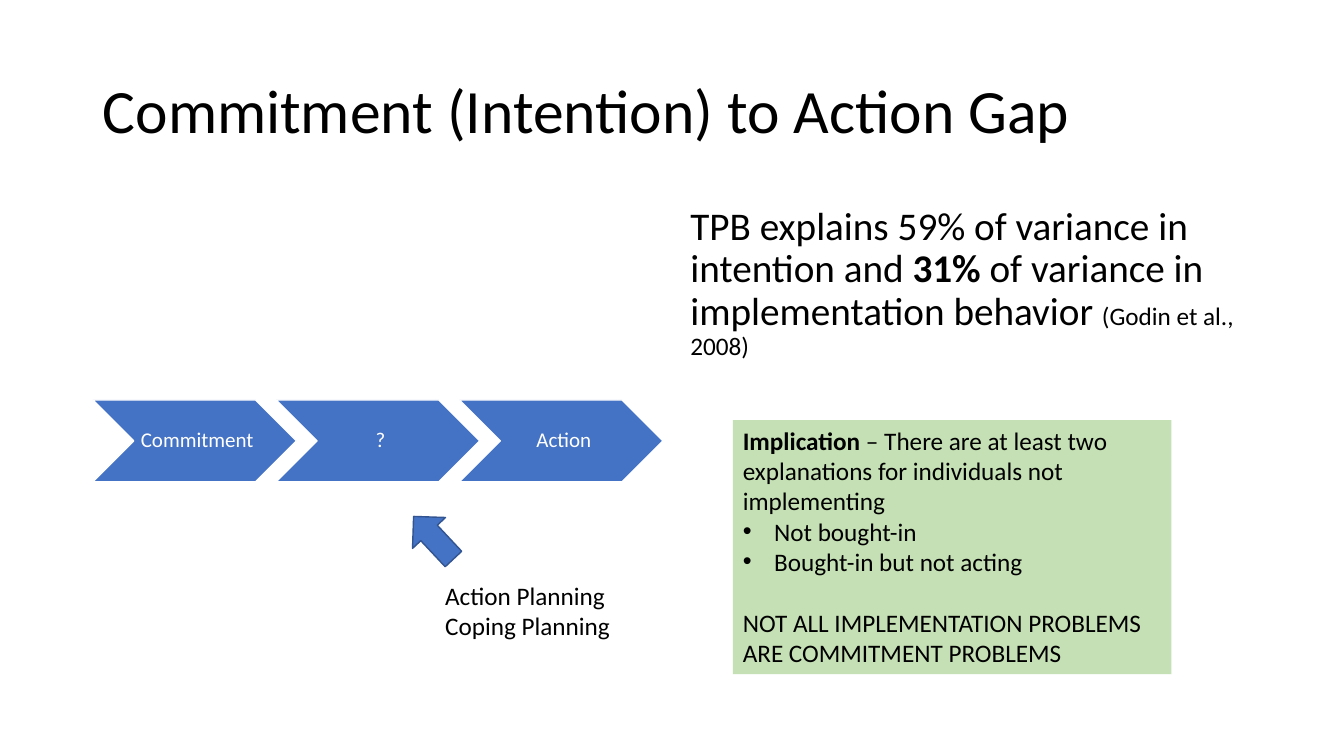
"""Build the slide on the gap between commitment and action."""
from dataclasses import dataclass

from lxml.etree import SubElement
from pptx import Presentation
from pptx.dml.color import RGBColor
from pptx.enum.shapes import MSO_SHAPE
from pptx.enum.text import MSO_ANCHOR, PP_ALIGN
from pptx.oxml.ns import qn
from pptx.util import Cm, Pt


@dataclass(frozen=True)
class Theme:
    """Hold the colours, font and type sizes of the slide."""
    face: str = "Calibri"
    ink: str = "000000"
    white: str = "FFFFFF"
    blue: str = "4472C4"
    edge: str = "325491"
    green: str = "C5E0B4"
    title: int = 44
    lead: int = 28
    note: int = 18
    step: int = 15


THEME = Theme()


def apply(item, form):
    """Set each value in the form on the item."""
    for name, value in form.items():
        setattr(item, name, value)


def write(shape, paras, size, ink=THEME.ink, frame=None, form=None):
    """Fill a shape with paragraphs made of (text, font form) runs."""
    text = shape.text_frame
    apply(text, {"word_wrap": True, **(frame or {})})
    for i, runs in enumerate(paras):
        para = text.add_paragraph() if i else text.paragraphs[0]
        apply(para, {"alignment": PP_ALIGN.LEFT, **(form or {})})
        for words, style in runs:
            run = para.add_run()
            run.text = words
            apply(run.font, {"name": THEME.face, "size": Pt(size), **style})
            run.font.color.rgb = RGBColor.from_string(ink)
    return text.paragraphs


def add_text(slide, area, paras, size, **more):
    """Add a text box with its area given in centimetres."""
    box = slide.shapes.add_textbox(*map(Cm, area))
    return write(box, paras, size, **more)


def add_block(slide, kind, area, fill, line=None):
    """Add a flat preset shape with its area given in centimetres."""
    shape = slide.shapes.add_shape(kind, *map(Cm, area))
    shape.shadow.inherit = False
    shape.fill.solid()
    shape.fill.fore_color.rgb = RGBColor.from_string(fill)
    if line:
        shape.line.color.rgb = RGBColor.from_string(line)
        shape.line.width = Pt(1)
    else:
        shape.line.fill.background()
    return shape


def add_steps(slide, names):
    """Add a row of chevrons, one for each name."""
    frame = {"vertical_anchor": MSO_ANCHOR.MIDDLE, "word_wrap": False,
             "margin_left": Cm(0.18), "margin_right": Cm(0.05),
             "margin_top": Cm(0.05), "margin_bottom": Cm(0.05)}
    form = {"alignment": PP_ALIGN.CENTER, "line_spacing": 0.9}
    for i, name in enumerate(names):
        area = (2.34 + 4.62 * i, 10.08, 5.13, 2.06)
        step = add_block(slide, MSO_SHAPE.CHEVRON, area, THEME.blue, THEME.white)
        write(step, [[(name, {})]], THEME.step, THEME.white, frame, form)


def add_dot(para):
    """Give a paragraph a bullet with a hanging indent."""
    props = para._p.get_or_add_pPr()
    dent = int(Cm(0.79))
    props.set("marL", str(dent))
    props.set("indent", str(-dent))
    SubElement(props, qn("a:buFont")).set("typeface", "Arial")
    SubElement(props, qn("a:buChar")).set("char", "•")


def add_card(slide):
    """Add the green card with the two reasons and the closing line."""
    card = add_block(slide, MSO_SHAPE.RECTANGLE, (18.47, 10.59, 11.05, 6.4), THEME.green)
    paras = write(card, [
        [("Implication", {"bold": True}),
         (" – There are at least two explanations for individuals not implementing", {})],
        [("Not bought-in", {})],
        [("Bought-in but not acting", {})],
        [("NOT ALL IMPLEMENTATION PROBLEMS ARE COMMITMENT PROBLEMS", {})],
    ], THEME.note, frame={"vertical_anchor": MSO_ANCHOR.TOP})
    for para in paras[1:3]:
        add_dot(para)
    paras[3].space_before = Pt(22)


def main():
    """Build and save the slide."""
    deck = Presentation()
    apply(deck, {"slide_width": Cm(33.87), "slide_height": Cm(19.05)})
    slide = deck.slides.add_slide(deck.slide_layouts[6])
    add_text(slide, (2.34, 1.02, 29.21, 3.68),
             [[("Commitment (Intention) to Action Gap", {})]], THEME.title,
             frame={"vertical_anchor": MSO_ANCHOR.MIDDLE}, form={"line_spacing": 0.9})
    add_steps(slide, ["Commitment", "?", "Action"])
    add_text(slide, (17.15, 5.08, 14.4, 12.09), [[
        ("TPB explains 59% of variance in intention and ", {}),
        ("31%", {"bold": True}),
        (" of variance in implementation behavior ", {}),
        ("(Godin et al., 2008)", {"size": Pt(THEME.note)}),
    ]], THEME.lead, form={"line_spacing": 0.9, "space_before": Pt(10)})
    add_text(slide, (10.97, 14.5, 6.17, 1.8),
             [[("Action Planning", {})], [("Coping Planning", {})]], THEME.note)
    arrow = add_block(slide, MSO_SHAPE.RIGHT_ARROW, (10.19, 12.98, 1.47, 1.14),
                      THEME.blue, THEME.edge)
    arrow.rotation = 226.9
    add_card(slide)
    deck.save("out.pptx")


if __name__ == "__main__":
    main()
